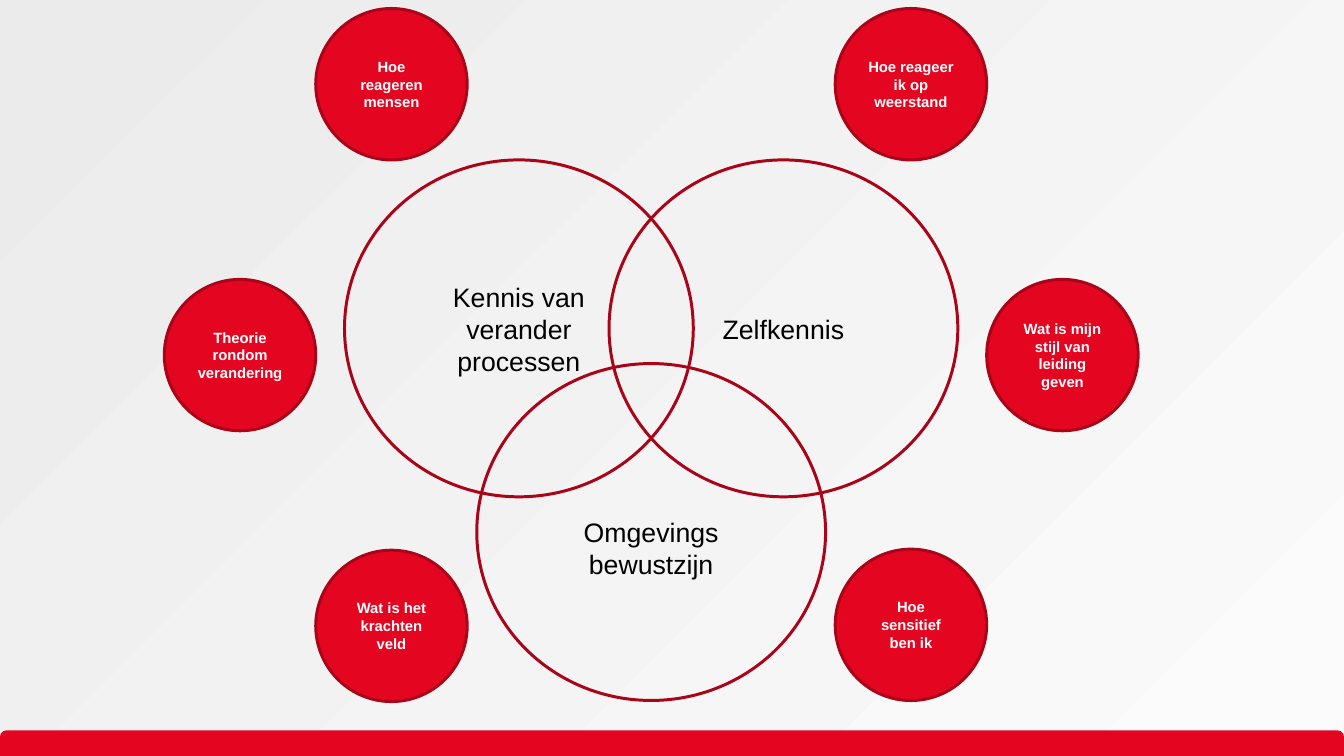
from dataclasses import dataclass

from pptx import Presentation
from pptx import util as u
from pptx.dml.color import RGBColor
from pptx.enum import shapes, text

COLORS = {
    "red": "E40521",
    "dark_red": "A90418",
    "black": "000000",
    "white": "FFFFFF",
    "bg_start": "ECEBEC",
    "bg_end": "FBFBFB",
}
FONT = "Arial"
WIDTH, HEIGHT = 12.6, 7.09
BAR_HEIGHT = 0.24


@dataclass
class CircleStyle:
    width: float
    height: float
    size: int
    color: str
    bold: bool
    side_inset: float
    fill: str | None = None


@dataclass
class Circle:
    left: float
    top: float
    lines: list[str]
    style: CircleStyle
    top_inset: float = 0.05


THEME = CircleStyle(3.27, 3.16, 18, "black", False, 0.1)
QUESTION = CircleStyle(1.42, 1.42, 10, "white", True, 0.09, "red")

CIRCLES = [
    # Overlapping themes
    Circle(4.47, 3.41, ["Omgevings bewustzijn"], THEME, top_inset=0.35),
    Circle(3.23, 1.5, ["Kennis van verander", "processen"], THEME),
    Circle(5.71, 1.5, ["Zelfkennis"], THEME),
    # Questions around them
    Circle(1.54, 2.62, ["Theorie rondom verandering"], QUESTION),
    Circle(2.96, 0.08, ["Hoe reageren mensen"], QUESTION),
    Circle(7.83, 5.15, ["Hoe sensitief ben ik"], QUESTION),
    Circle(2.96, 5.16, ["Wat is het krachten veld"], QUESTION),
    Circle(9.25, 2.62, ["Wat is mijn stijl van leiding geven"], QUESTION),
    Circle(7.83, 0.08, ["Hoe reageer ik op weerstand"], QUESTION),
]


def rgb(name: str) -> RGBColor:
    return RGBColor.from_string(COLORS[name])


def set_background(s) -> None:
    fill = s.background.fill
    fill.gradient()
    fill.gradient_angle = 315
    for stop, name in zip(fill.gradient_stops, ("bg_start", "bg_end")):
        stop.color.rgb = rgb(name)


def add_bar(s) -> None:
    sp = s.shapes.add_shape(
        shapes.MSO_SHAPE.ROUND_2_SAME_RECTANGLE,
        u.Inches(0), u.Inches(HEIGHT - BAR_HEIGHT),
        u.Inches(WIDTH), u.Inches(BAR_HEIGHT))
    sp.adjustments[0] = 0.25
    sp.adjustments[1] = 0
    sp.shadow.inherit = False
    sp.fill.solid()
    sp.fill.fore_color.rgb = rgb("red")
    sp.line.fill.background()


def add_circle(s, circle: Circle) -> None:
    style = circle.style
    sp = s.shapes.add_shape(
        shapes.MSO_SHAPE.OVAL, u.Inches(circle.left), u.Inches(circle.top),
        u.Inches(style.width), u.Inches(style.height))
    sp.shadow.inherit = False
    if style.fill:
        sp.fill.solid()
        sp.fill.fore_color.rgb = rgb(style.fill)
    else:
        sp.fill.background()
    sp.line.color.rgb = rgb("dark_red")
    sp.line.width = u.Pt(2)

    tf = sp.text_frame
    tf.word_wrap = True
    tf.vertical_anchor = text.MSO_ANCHOR.MIDDLE
    tf.margin_left = tf.margin_right = u.Inches(style.side_inset)
    tf.margin_top = u.Inches(circle.top_inset)
    tf.margin_bottom = u.Inches(0.05)
    for i, line in enumerate(circle.lines):
        p = tf.add_paragraph() if i else tf.paragraphs[0]
        p.alignment = text.PP_ALIGN.CENTER
        r = p.add_run()
        r.text = line
        r.font.name = FONT
        r.font.size = u.Pt(style.size)
        r.font.bold = style.bold
        r.font.color.rgb = rgb(style.color)


def main() -> None:
    prs = Presentation()
    prs.slide_width = u.Inches(WIDTH)
    prs.slide_height = u.Inches(HEIGHT)
    s = prs.slides.add_slide(prs.slide_layouts[6])
    set_background(s)
    add_bar(s)
    for circle in CIRCLES:
        add_circle(s, circle)
    prs.save("out.pptx")


if __name__ == "__main__":
    main()
